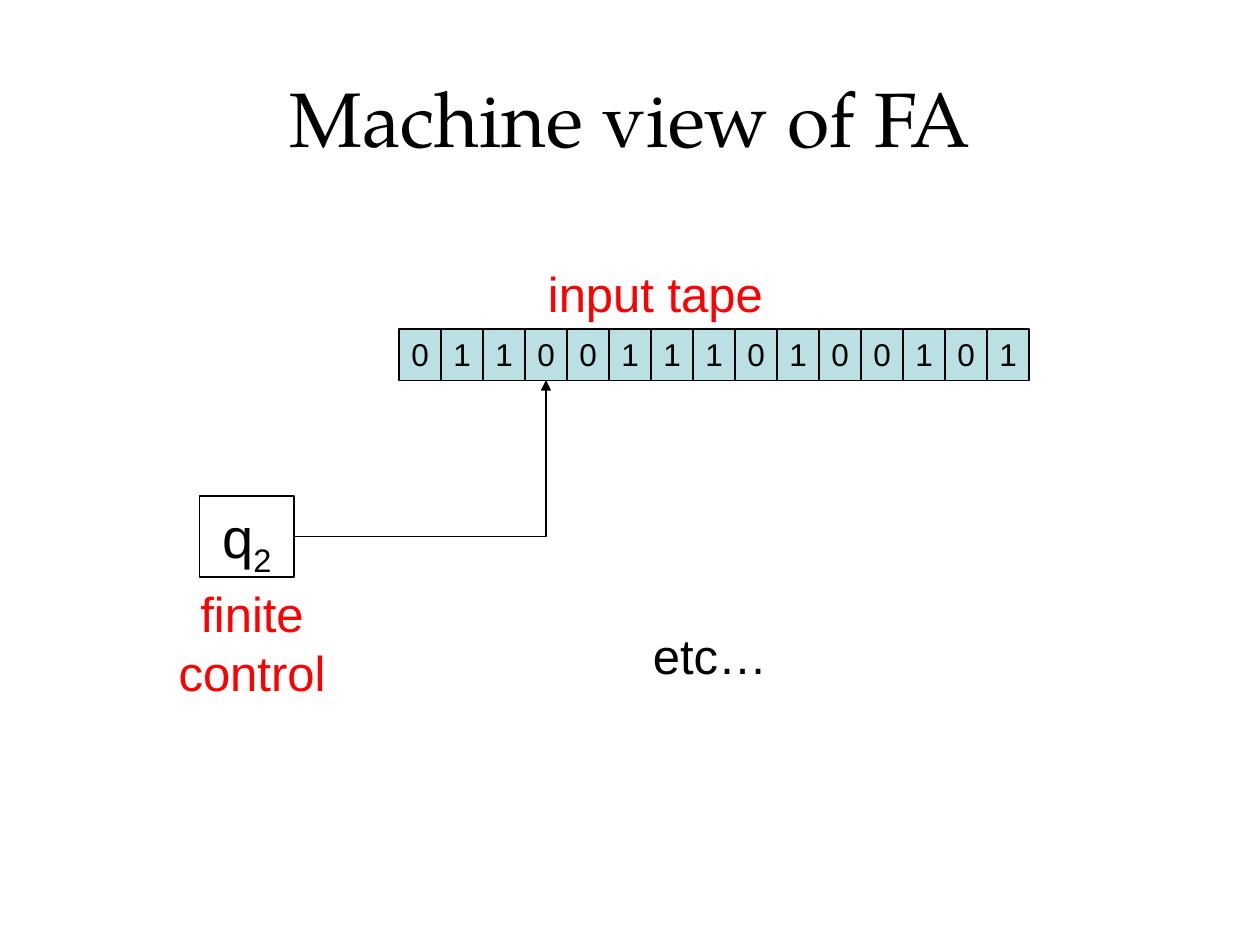
from pptx import Presentation
from pptx.dml.color import RGBColor
from pptx.enum.shapes import MSO_CONNECTOR, MSO_SHAPE
from pptx.enum.text import MSO_ANCHOR, PP_ALIGN
from pptx.oxml.ns import qn
from pptx.oxml.xmlchemy import OxmlElement
from pptx.util import Pt

RECT = MSO_SHAPE.RECTANGLE
ELBOW = MSO_CONNECTOR.ELBOW
TOP, MIDDLE = MSO_ANCHOR.TOP, MSO_ANCHOR.MIDDLE
LEFT, CENTER = PP_ALIGN.LEFT, PP_ALIGN.CENTER
BLACK, RED, PALE_BLUE = "000000", "FF0000", "BBE0E3"


def rgb(value):
    return RGBColor.from_string(value)


def put_text(sp, text, size=28, color=BLACK, font="Arial", align=CENTER,
             anchor=TOP, subscript=""):
    tf = sp.text_frame
    tf.word_wrap = True
    tf.vertical_anchor = anchor
    p = tf.paragraphs[0]
    p.alignment = align
    for part in filter(None, (text, subscript)):
        r = p.add_run()
        r.text = part
        r.font.size = Pt(size)
        r.font.name = font
        r.font.color.rgb = rgb(color)
    if subscript:
        r.font._element.set("baseline", "-25000")


prs = Presentation()
prs.slide_width, prs.slide_height = Pt(720), Pt(540)
s = prs.slides.add_slide(prs.slide_layouts[5])

title = s.shapes.title
title.left, title.top, title.width, title.height = Pt(36), Pt(21.6), Pt(648), Pt(90)
put_text(title, "Machine view of FA", size=44, font="TeX Gyre Pagella", anchor=MIDDLE)

# Tape cells, followed by the finite control
CELL = 24
boxes = [(228 + i * CELL, 188, CELL, 29.3, PALE_BLUE, bit, 18, "")
         for i, bit in enumerate("011001110100101")]
boxes.append((114, 283.5, 54, 46.2, None, "q", 32, "2"))
rects = []
for x, y, w, h, fill, text, size, subscript in boxes:
    sp = s.shapes.add_shape(RECT, Pt(x), Pt(y), Pt(w), Pt(h))
    sp.shadow.inherit = False
    if fill:
        sp.fill.solid()
        sp.fill.fore_color.rgb = rgb(fill)
    else:
        sp.fill.background()
    sp.line.color.rgb = rgb(BLACK)
    sp.line.width = Pt(0.75)
    put_text(sp, text, size=size, subscript=subscript)
    rects.append(sp)
control, read_cell = rects[-1], rects[3]

for x, y, w, h, text, color, align in [
    (306, 147, 168, 41, "input tape", RED, LEFT),
    (78, 330, 132, 74, "finite control", RED, CENTER),
    (366, 354, 180, 41, "etc…", BLACK, LEFT),
]:
    sp = s.shapes.add_textbox(Pt(x), Pt(y), Pt(w), Pt(h))
    put_text(sp, text, color=color, align=align)

# Reading head: right from the control, then up to the cell being read
head = s.shapes.add_connector(ELBOW, Pt(168), Pt(306.6), Pt(312), Pt(217.3))
head.begin_connect(control, 3)
head.end_connect(read_cell, 2)
head.line.color.rgb = rgb(BLACK)
head.line.width = Pt(0.75)
spPr = head._element.spPr
spPr.find(qn("a:prstGeom")).set("prst", "bentConnector2")
arrow = OxmlElement("a:tailEnd")
arrow.set("type", "triangle")
spPr.find(qn("a:ln")).append(arrow)
spPr.append(OxmlElement("a:effectLst"))

prs.save("out.pptx")
